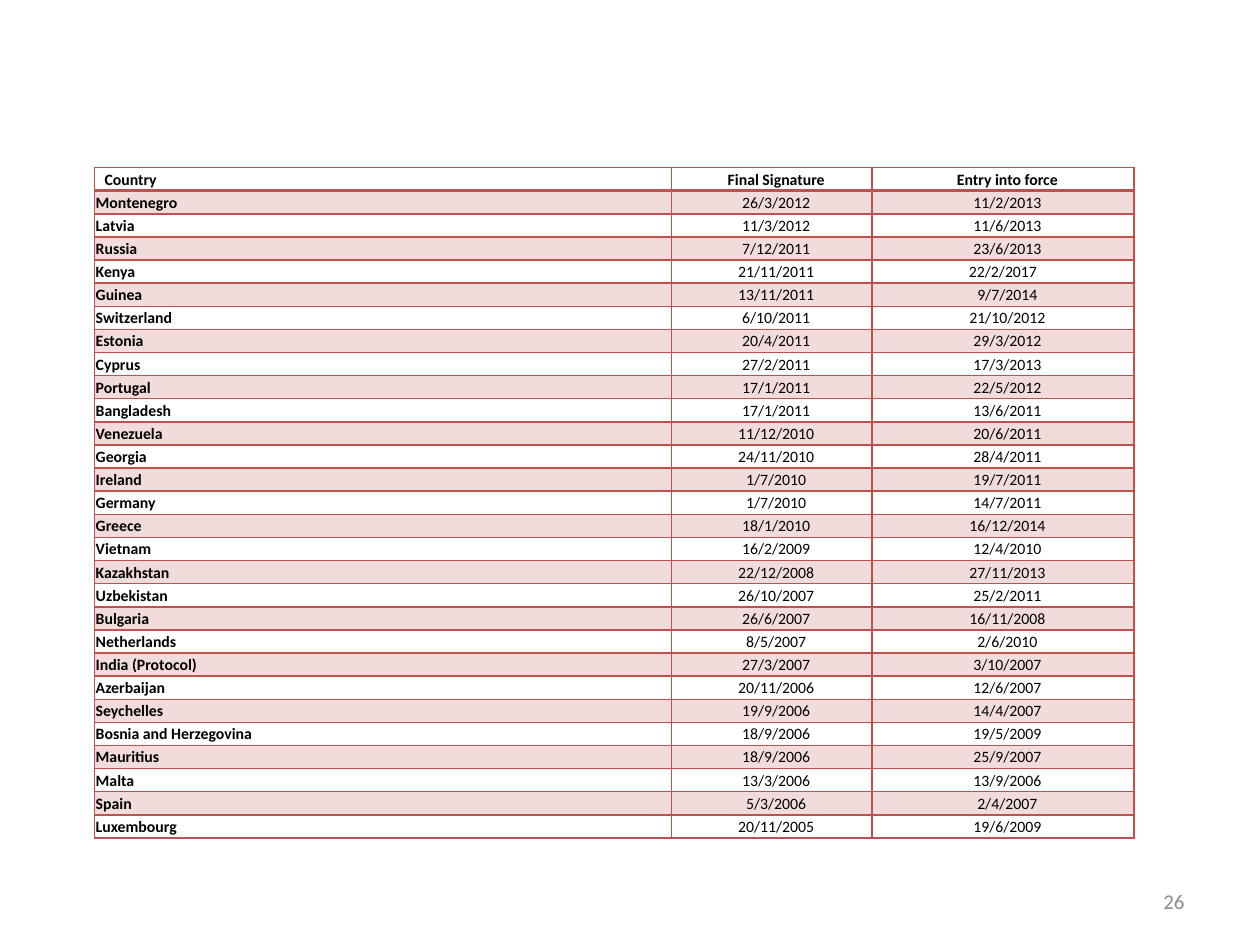
from lxml.etree import SubElement
from pptx import Presentation
from pptx.dml.color import RGBColor
from pptx.enum.text import MSO_ANCHOR, PP_ALIGN
from pptx.oxml.ns import qn
from pptx.util import Inches, Pt

COLORS = {"red": "C0504D", "text": "000000", "number": "8C8C8C"}
FONT = "Calibri"
HEADERS = ("Country", "Final Signature", "Entry into force")
TREATIES = [
    ("Montenegro", "26/3/2012", "11/2/2013"),
    ("Latvia", "11/3/2012", "11/6/2013"),
    ("Russia", "7/12/2011", "23/6/2013"),
    ("Kenya", "21/11/2011", "22/2/2017"),
    ("Guinea", "13/11/2011", "9/7/2014"),
    ("Switzerland", "6/10/2011", "21/10/2012"),
    ("Estonia", "20/4/2011", "29/3/2012"),
    ("Cyprus", "27/2/2011", "17/3/2013"),
    ("Portugal", "17/1/2011", "22/5/2012"),
    ("Bangladesh", "17/1/2011", "13/6/2011"),
    ("Venezuela", "11/12/2010", "20/6/2011"),
    ("Georgia", "24/11/2010", "28/4/2011"),
    ("Ireland", "1/7/2010", "19/7/2011"),
    ("Germany", "1/7/2010", "14/7/2011"),
    ("Greece", "18/1/2010", "16/12/2014"),
    ("Vietnam", "16/2/2009", "12/4/2010"),
    ("Kazakhstan", "22/12/2008", "27/11/2013"),
    ("Uzbekistan", "26/10/2007", "25/2/2011"),
    ("Bulgaria", "26/6/2007", "16/11/2008"),
    ("Netherlands", "8/5/2007", "2/6/2010"),
    ("India (Protocol)", "27/3/2007", "3/10/2007"),
    ("Azerbaijan", "20/11/2006", "12/6/2007"),
    ("Seychelles", "19/9/2006", "14/4/2007"),
    ("Bosnia and Herzegovina", "18/9/2006", "19/5/2009"),
    ("Mauritius", "18/9/2006", "25/9/2007"),
    ("Malta", "13/3/2006", "13/9/2006"),
    ("Spain", "5/3/2006", "2/4/2007"),
    ("Luxembourg", "20/11/2005", "19/6/2009"),
]


def add_text(p, text, size, color, bold=False):
    r = p.add_run()
    r.text = text
    r.font.name = FONT
    r.font.size = Pt(size)
    r.font.bold = bold
    r.font.color.rgb = RGBColor.from_string(COLORS[color])


def set_borders(cell, **widths):
    tcPr = cell._tc.get_or_add_tcPr()
    for side in "LRTB":
        ln = SubElement(tcPr, qn(f"a:ln{side}"), w=str(Pt(widths.get(side, 1))))
        fill = SubElement(ln, qn("a:solidFill"))
        SubElement(fill, qn("a:srgbClr"), val=COLORS["red"])


def set_tint(cell, percent):
    cell.fill.solid()
    cell.fill.fore_color.rgb = RGBColor.from_string(COLORS["red"])
    clr = cell._tc.tcPr.find(qn("a:solidFill")).find(qn("a:srgbClr"))
    SubElement(clr, qn("a:alpha"), val=str(percent * 1000))


def fill_cell(cell, text, row, col):
    cell.margin_left = cell.margin_right = Inches(0.01)
    cell.margin_top = cell.margin_bottom = Inches(0.01)
    set_borders(cell, T=2 if row == 1 else 1, B=2 if row == 0 else 1)
    if row % 2:
        set_tint(cell, 20)
    else:
        cell.fill.background()
    p = cell.text_frame.paragraphs[0]
    p.line_spacing = 1.07
    p.alignment = PP_ALIGN.CENTER if col else PP_ALIGN.LEFT
    if (row == 0 or col > 0) and text != "22/2/2017":
        p._p.get_or_add_pPr().set("marL", str(Inches(0.07)))
    add_text(p, text, 9, "text", bold=row == 0 or col == 0)


def add_treaty_table(s, left, top, width, height):
    rows = [HEADERS, *TREATIES]
    table = s.shapes.add_table(len(rows), len(HEADERS), left, top, width, height).table
    table.first_row = table.horz_banding = False
    for column, column_width in zip(table.columns, (4.58, 1.59, 2.08)):
        column.width = Inches(column_width)
    for i, values in enumerate(rows):
        for j, text in enumerate(values):
            fill_cell(table.cell(i, j), text, i, j)


def add_slide_number(s, left, top, width, height):
    tf = s.shapes.add_textbox(left, top, width, height).text_frame
    tf.word_wrap = True
    tf.vertical_anchor = MSO_ANCHOR.MIDDLE
    p = tf.paragraphs[0]
    p.alignment = PP_ALIGN.RIGHT
    add_text(p, "26", 12, "number")


def main():
    prs = Presentation()
    prs.slide_width, prs.slide_height = Inches(10), Inches(7.5)
    s = prs.slides.add_slide(prs.slide_layouts[6])
    add_slide_number(s, Inches(7.17), Inches(6.95), Inches(2.33), Inches(0.4))
    add_treaty_table(s, Inches(0.75), Inches(1.33), Inches(8.25), Inches(5.33))
    prs.save("out.pptx")


if __name__ == "__main__":
    main()
